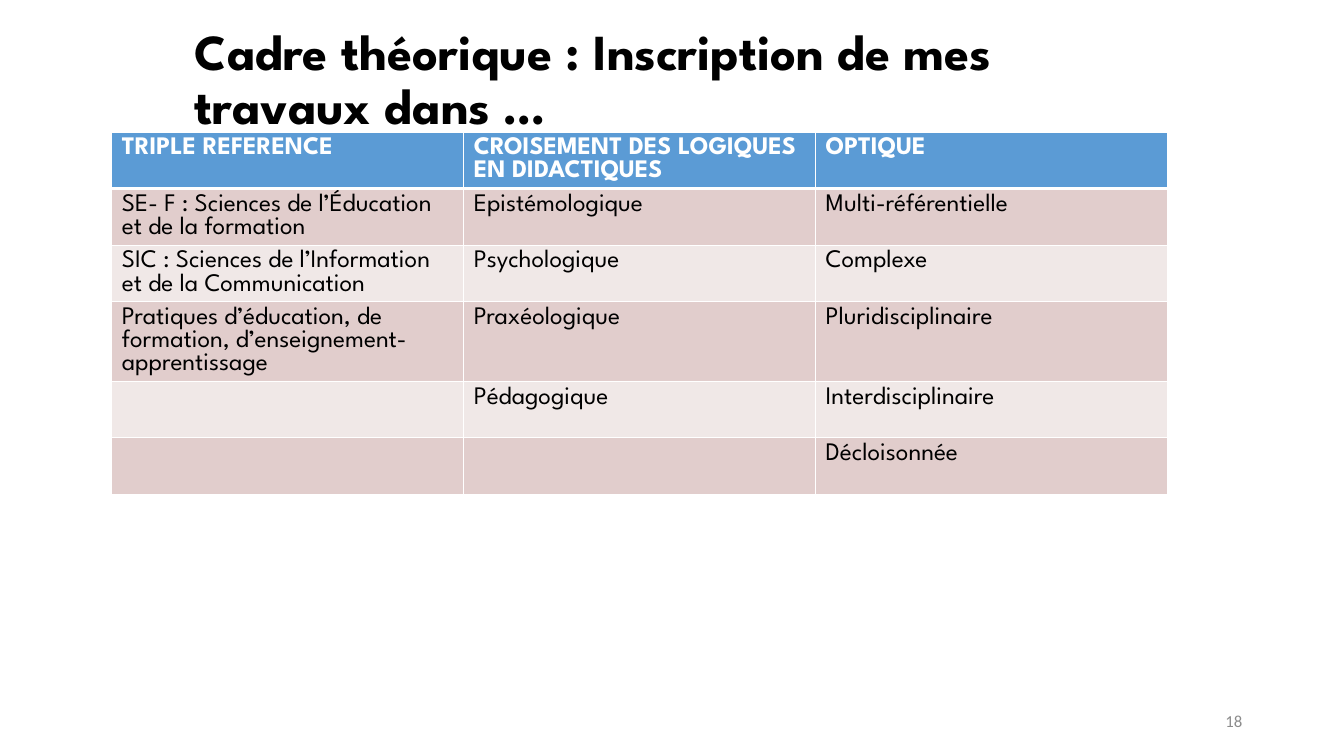
"""Build the slide presenting the theoretical framework as a three-column table."""
from dataclasses import dataclass

from lxml.etree import SubElement
from pptx import Presentation
from pptx.dml.color import RGBColor
from pptx.enum.text import MSO_ANCHOR, MSO_AUTO_SIZE, PP_ALIGN
from pptx.oxml.ns import qn
from pptx.util import Inches, Pt

TITLE = "Cadre théorique : Inscription de mes travaux dans …"
PAGE_NUMBER = "18"
COLUMNS = {
    "TRIPLE REFERENCE": [
        "SE- F : Sciences de l’Éducation et de la formation",
        "SIC : Sciences de l’Information et de la Communication",
        "Pratiques d’éducation, de formation, d’enseignement-apprentissage",
    ],
    "CROISEMENT DES LOGIQUES EN DIDACTIQUES": [
        "Epistémologique", "Psychologique", "Praxéologique", "Pédagogique",
    ],
    "OPTIQUE": [
        "Multi-référentielle", "Complexe", "Pluridisciplinaire",
        "Interdisciplinaire", "Décloisonnée",
    ],
}
ROW_HEIGHTS = [0.56, 0.56, 0.56, 0.79, 0.56, 0.56]
COLUMN_WIDTH = 3.49


@dataclass(frozen=True)
class Theme:
    """Colours, fonts and type sizes of the slide."""

    text: str = "000000"
    white: str = "FFFFFF"
    header: str = "5B9BD5"
    bands: tuple = ("F0E8E7", "E1CDCC")
    muted: str = "8C8C8C"
    font: str = "League Spartan"
    number_font: str = "Calibri"
    title_size: int = 36
    table_size: int = 18
    number_size: int = 12


THEME = Theme()


def write(frame, text, *, size, color=THEME.text, font=THEME.font, bold=False,
          align=PP_ALIGN.LEFT, spacing=None):
    """Write one formatted paragraph into a text frame."""
    frame.word_wrap = True
    paragraph = frame.paragraphs[0]
    paragraph.alignment = align
    paragraph.line_spacing = spacing
    paragraph.font.size = Pt(size)
    if not text:
        return
    run = paragraph.add_run()
    run.text = text
    run.font.size = Pt(size)
    run.font.name = font
    run.font.bold = bold
    run.font.color.rgb = RGBColor.from_string(color)


def fill_cell(cell, color, top, bottom):
    """Fill a cell and draw its white borders with the given widths in points."""
    properties = cell._tc.get_or_add_tcPr()
    for tag, width in (("a:lnL", 1), ("a:lnR", 1), ("a:lnT", top), ("a:lnB", bottom)):
        line = SubElement(properties, qn(tag), w=str(Pt(width)))
        solid = SubElement(line, qn("a:solidFill"))
        SubElement(solid, qn("a:srgbClr"), val=THEME.white)
    cell.fill.solid()
    cell.fill.fore_color.rgb = RGBColor.from_string(color)


def add_title(slide):
    """Place the title in its placeholder."""
    title = slide.shapes.title
    title.left, title.top = Inches(1.83), Inches(0.55)
    title.width, title.height = Inches(9.75), Inches(0.51)
    frame = title.text_frame
    frame.auto_size = MSO_AUTO_SIZE.NONE
    frame.vertical_anchor = MSO_ANCHOR.MIDDLE
    write(frame, TITLE, size=THEME.title_size, bold=True, spacing=0.9)


def add_framework_table(slide):
    """Add the table with its header and alternating row colours."""
    table = slide.shapes.add_table(
        len(ROW_HEIGHTS), len(COLUMNS), Inches(1.11), Inches(1.31),
        Inches(COLUMN_WIDTH * len(COLUMNS)), Inches(sum(ROW_HEIGHTS))).table
    for row, height in zip(table.rows, ROW_HEIGHTS):
        row.height = Inches(height)
    for column_index, (heading, entries) in enumerate(COLUMNS.items()):
        table.columns[column_index].width = Inches(COLUMN_WIDTH)
        texts = [heading, *entries]
        for row_index in range(len(ROW_HEIGHTS)):
            is_header = row_index == 0
            cell = table.cell(row_index, column_index)
            fill_cell(cell, THEME.header if is_header else THEME.bands[row_index % 2],
                      top=3 if row_index == 1 else 1, bottom=3 if is_header else 1)
            text = texts[row_index] if row_index < len(texts) else ""
            write(cell.text_frame, text, size=THEME.table_size, bold=is_header,
                  color=THEME.white if is_header else THEME.text)


def add_page_number(slide):
    """Add the page number at the bottom right."""
    box = slide.shapes.add_textbox(Inches(9.42), Inches(6.95), Inches(3), Inches(0.4))
    box.text_frame.vertical_anchor = MSO_ANCHOR.MIDDLE
    write(box.text_frame, PAGE_NUMBER, size=THEME.number_size, color=THEME.muted,
          font=THEME.number_font, align=PP_ALIGN.RIGHT)


def main():
    """Create and save the presentation."""
    presentation = Presentation()
    presentation.slide_width, presentation.slide_height = Inches(13.33), Inches(7.5)
    slide = presentation.slides.add_slide(presentation.slide_layouts[5])
    add_title(slide)
    add_framework_table(slide)
    add_page_number(slide)
    presentation.save("out.pptx")


if __name__ == "__main__":
    main()
